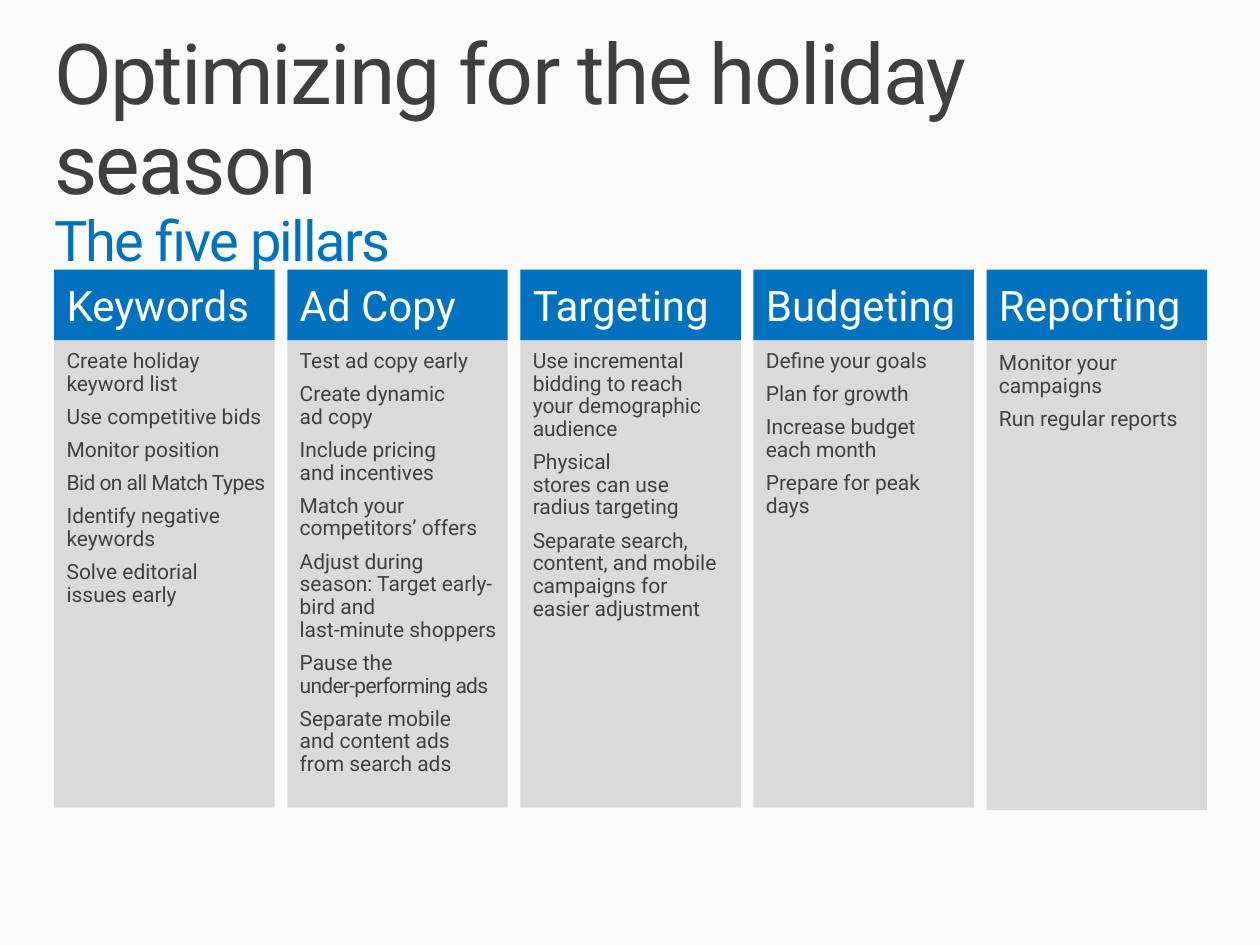
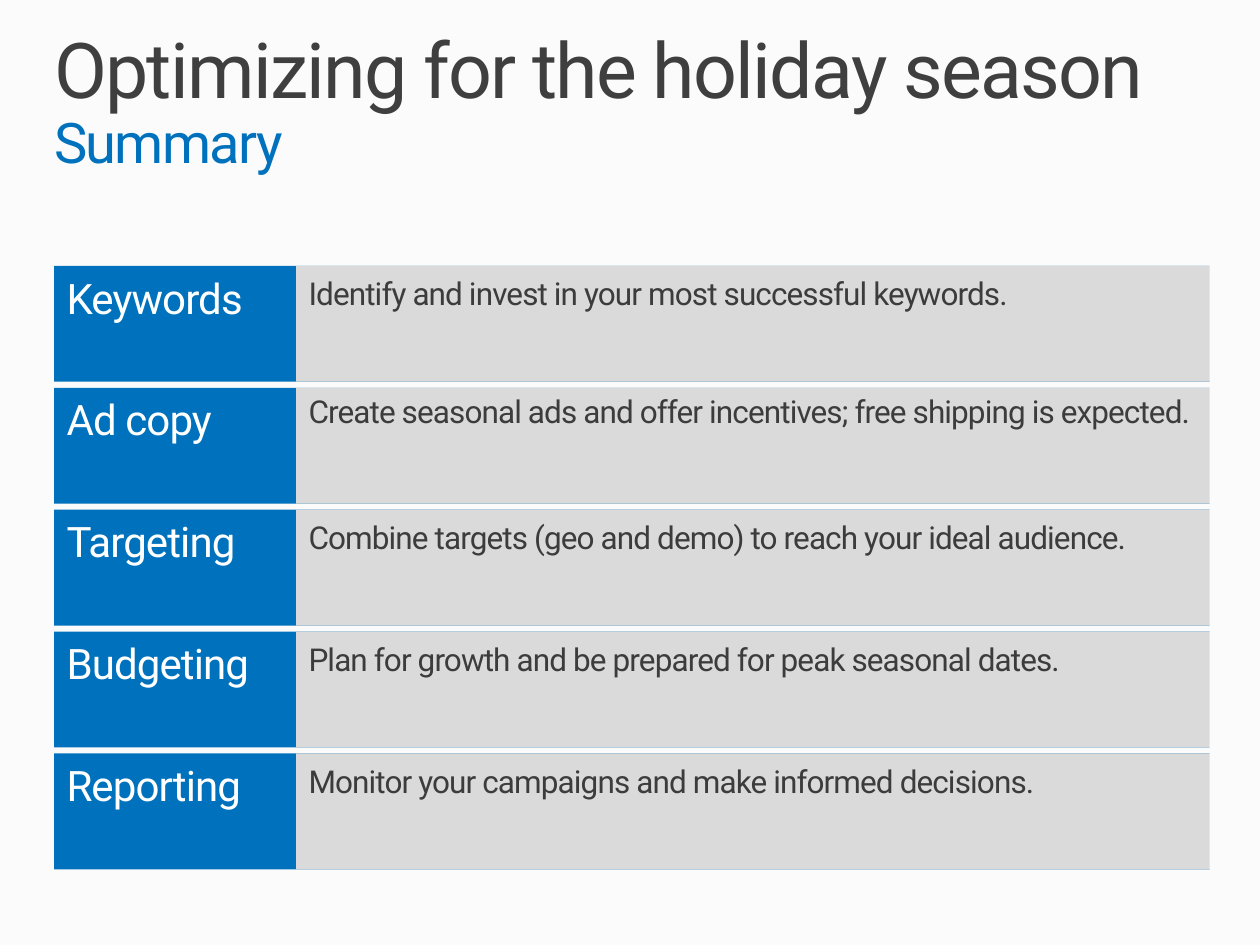
from pptx import Presentation
from pptx.dml.color import RGBColor
from pptx.enum import shapes, text
from pptx.util import Inches, Pt

COLORS = {
    "background": "FBFBFB",
    "blue": "0071BC",
    "panel": "DADADA",
    "title": "3F3F3F",
    "item": "404040",
    "summary": "3C3C3C",
    "white": "FFFFFF",
}
FONT = "Roboto"
TITLE = "Optimizing for the holiday season"
LEFT = 0.43

# Heading, panel top, right inset, items; an item is a list of (text, tracking) or plain text.
PILLARS = [
    ("Keywords", 2.68, 0.05, [
        "Create holiday\vkeyword list",
        "Use competitive bids",
        "Monitor position",
        [("Bid on all Match Types", -0.3)],
        "Identify negative keywords",
        "Solve editorial\vissues early",
    ]),
    ("Ad Copy", 2.68, 0.05, [
        "Test ad copy early",
        "Create dynamic\vad copy",
        "Include pricing\vand incentives",
        "Match your competitors’ offers",
        "Adjust during season: Target early-bird and\vlast-minute shoppers",
        [("Pause the\v", 0), ("under-performing ads", -0.4)],
        "Separate mobile\vand content ads\vfrom search ads",
    ]),
    ("Targeting", 2.68, 0.1, [
        "Use incremental\vbidding to reach your demographic audience",
        "Physical\vstores can use\vradius targeting",
        "Separate search, content, and mobile campaigns for easier adjustment",
    ]),
    ("Budgeting", 2.68, 0.05, [
        "Define your goals",
        "Plan for growth",
        "Increase budget\veach month",
        "Prepare for peak days",
    ]),
    ("Reporting", 2.7, 0.1, [
        "Monitor your campaigns",
        "Run regular reports",
    ]),
]

# Heading, summary, line spacing
SUMMARY = [
    ("Keywords", "Identify and invest in your most successful keywords.", 0.9),
    ("Ad copy", "Create seasonal ads and offer incentives; free shipping is expected.", Pt(17)),
    ("Targeting", "Combine targets (geo and demo) to reach your ideal audience.", 0.9),
    ("Budgeting", "Plan for growth and be prepared for peak seasonal dates.", 0.9),
    ("Reporting", "Monitor your campaigns and make informed decisions.", 0.9),
]


def rgb(name):
    return RGBColor.from_string(COLORS[name])


def style_font(font, size, color):
    font.name = FONT
    font.size = Pt(size)
    font.color.rgb = rgb(color)


def add_span(paragraph, words, tracking=0):
    """Append words, with line breaks at vertical tabs and tracking in points."""
    spans = []
    for index, line in enumerate(words.split("\v")):
        if index:
            paragraph.add_line_break()
        if line:
            span = paragraph.add_run()
            span.text = line
            if tracking:
                span._r.get_or_add_rPr().set("spc", str(round(tracking * 100)))
            spans.append(span)
    return spans


def set_frame(frame, insets, anchor=text.MSO_ANCHOR.TOP):
    """Insets run left, top, right, bottom."""
    frame.word_wrap = True
    frame.vertical_anchor = anchor
    (frame.margin_left, frame.margin_top,
     frame.margin_right, frame.margin_bottom) = map(Inches, insets)


def add_block(page, left, top, width, height, fill):
    block = page.shapes.add_shape(
        shapes.MSO_SHAPE.RECTANGLE, *map(Inches, (left, top, width, height)))
    block.shadow.inherit = False
    block.fill.solid()
    block.fill.fore_color.rgb = rgb(fill)
    block.line.fill.background()
    return block


def write_paragraphs(block, items, size, color, spacing=1.0, after=0, tracking=0):
    frame = block.text_frame
    for index, item in enumerate(items):
        paragraph = frame.add_paragraph() if index else frame.paragraphs[0]
        paragraph.alignment = text.PP_ALIGN.LEFT
        paragraph.line_spacing = spacing
        paragraph.space_after = Pt(after)
        style_font(paragraph.font, size, color)
        for words, span_tracking in [(item, tracking)] if isinstance(item, str) else item:
            add_span(paragraph, words, span_tracking)


def add_title(page, subtitle, size, height):
    box = page.shapes.add_textbox(*map(Inches, (LEFT, 0.25, 9.15, height)))
    set_frame(box.text_frame, (0, 0, 0, 0))
    box.text_frame.auto_size = text.MSO_AUTO_SIZE.SHAPE_TO_FIT_TEXT
    paragraph = box.text_frame.paragraphs[0]
    paragraph.line_spacing = 0.9
    for words, span_size, color in ((TITLE + "\v", size, "title"), (subtitle, 32, "blue")):
        for span in add_span(paragraph, words, -1):
            style_font(span.font, span_size, color)


def add_pillar(page, left, heading, panel_top, right_inset, items):
    panel = add_block(page, left, panel_top, 1.75, 3.73, "panel")
    set_frame(panel.text_frame, (0.1, 0.1, right_inset, 0.05))
    write_paragraphs(panel, items, 12, "item", spacing=0.9, after=6)
    header = add_block(page, left, 2.14, 1.75, 0.56, "blue")
    set_frame(header.text_frame, (0.1, 0.05, 0.1, 0.05), text.MSO_ANCHOR.MIDDLE)
    write_paragraphs(header, [heading], 24, "white")


def add_summary_row(page, top, heading, summary, spacing):
    label = add_block(page, LEFT, top, 9.57, 0.92, "blue")
    set_frame(label.text_frame, (0.1, 0.05, 0.05, 0.1))
    write_paragraphs(label, [heading], 24, "white", tracking=-0.5)
    panel = add_block(page, 2.35, top, 7.65, 0.92, "panel")
    set_frame(panel.text_frame, (0.1, 0.1, 0.05, 0.1))
    write_paragraphs(panel, [summary], 18, "summary", spacing=spacing, tracking=-0.5)


def add_page(deck):
    page = deck.slides.add_slide(deck.slide_layouts[6])
    page.background.fill.solid()
    page.background.fill.fore_color.rgb = rgb("background")
    return page


def build_pillars(deck):
    page = add_page(deck)
    for index, pillar in enumerate(PILLARS):
        add_pillar(page, LEFT + index * 1.85, *pillar)
    add_title(page, "The five pillars", 48, 1.21)


def build_summary(deck):
    page = add_page(deck)
    add_title(page, "Summary", 44, 1.15)
    pitch = 3.87 / (len(SUMMARY) - 1)
    for index, row in enumerate(SUMMARY):
        add_summary_row(page, 2.11 + index * pitch, *row)
    # The right margin trims the rows
    add_block(page, 9.6, 0.81, 0.4, 6.12, "background")


def main():
    deck = Presentation()
    deck.slide_width, deck.slide_height = Inches(10), Inches(7.5)
    build_pillars(deck)
    build_summary(deck)
    deck.save("out.pptx")


if __name__ == "__main__":
    main()
